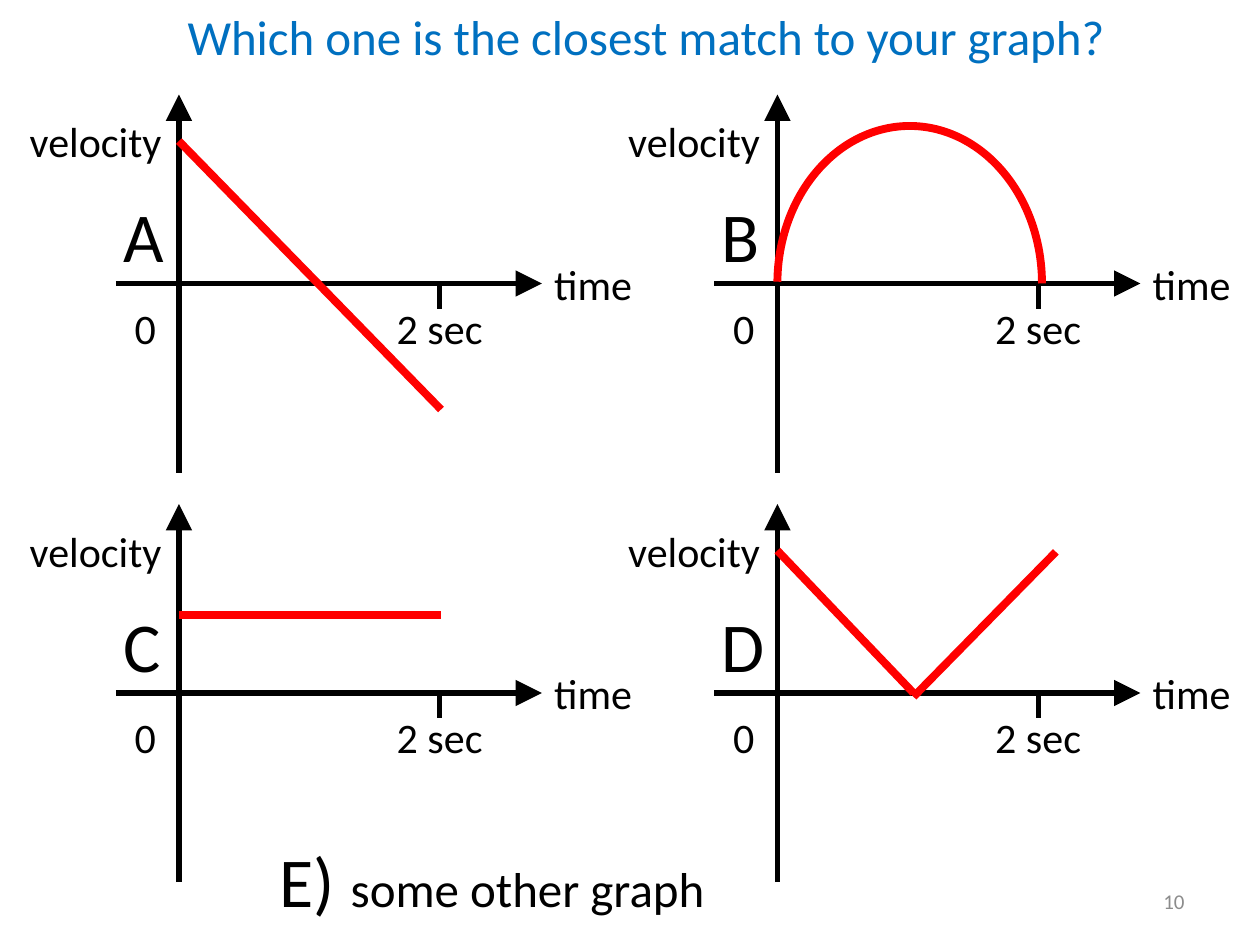
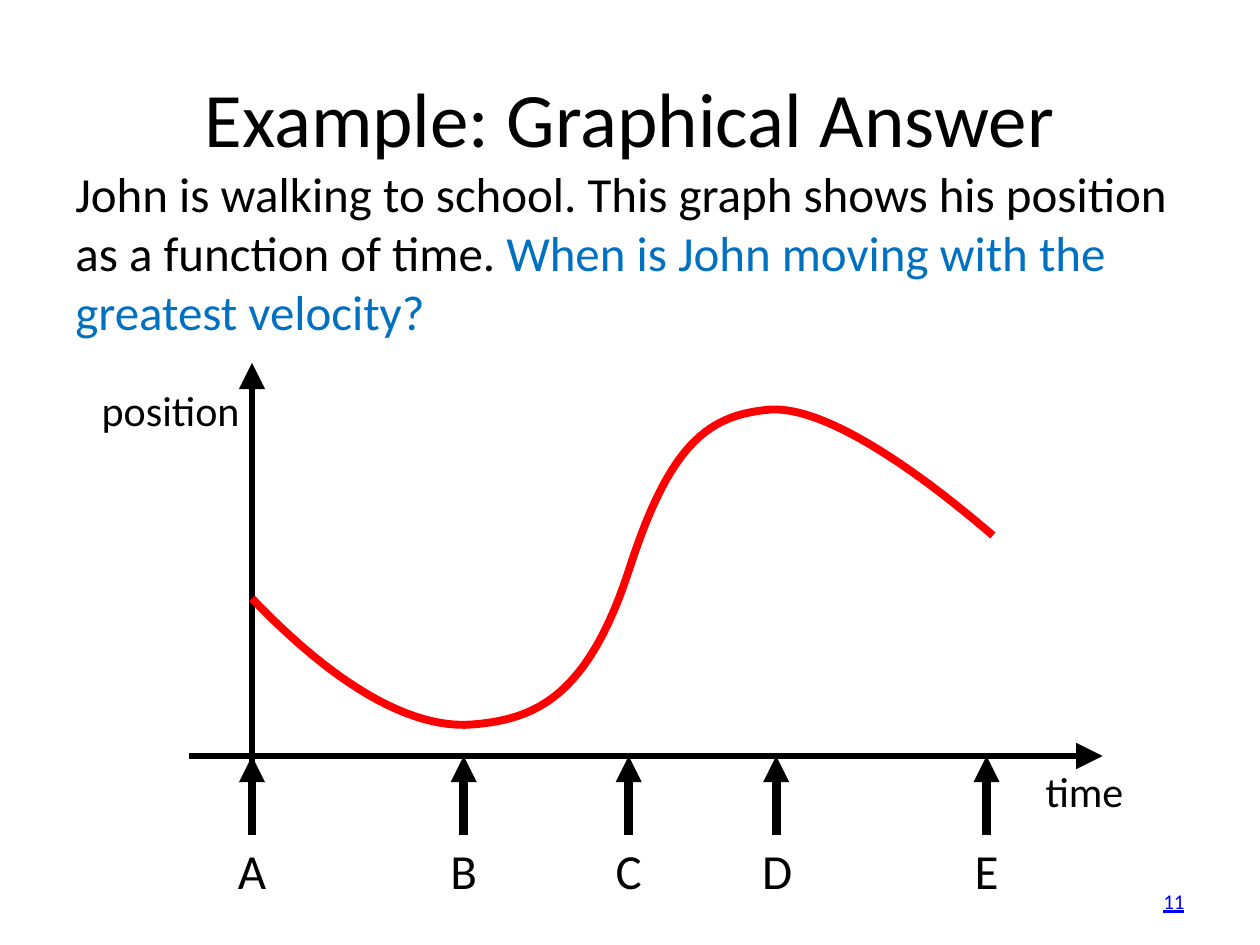
"""Build two physics quiz slides: matching velocity graphs and reading a position graph."""
from lxml.etree import SubElement
from pptx import Presentation
from pptx.dml.color import RGBColor
from pptx.enum.shapes import MSO_CONNECTOR, MSO_SHAPE
from pptx.enum.text import MSO_ANCHOR, PP_ALIGN
from pptx.oxml.ns import qn
from pptx.util import Pt

PX = 9144
BLACK, RED, BLUE, GRAY, LINK = "000000", "FF0000", "0070C0", "8C8C8C", "0000FF"
LEFT, CENTER, RIGHT = PP_ALIGN.LEFT, PP_ALIGN.CENTER, PP_ALIGN.RIGHT
rgb = RGBColor.from_string


def add_text(s, box, runs, align=LEFT, anchor=MSO_ANCHOR.TOP, wrap=False, **extra):
    tf = s.shapes.add_textbox(*[v * PX for v in box]).text_frame
    tf.word_wrap, tf.vertical_anchor = wrap, anchor
    p = tf.paragraphs[0]
    p.alignment = align
    for text, size, color in runs:
        r = p.add_run()
        r.text = text
        r.font.color.rgb = rgb(color)
        fmt = {"name": "Calibri", "size": Pt(size), **extra}
        for key, value in fmt.items():
            setattr(r.font, key, value)


def add_line(s, ends, color=BLACK, width=3, head=None):
    ln = s.shapes.add_connector(MSO_CONNECTOR.STRAIGHT, *[v * PX for v in ends])
    ln.line.color.rgb = rgb(color)
    ln.line.width = Pt(width)
    spPr = ln._element.spPr
    if head:
        SubElement(spPr.find(qn("a:ln")), qn("a:tailEnd"), type="triangle", w=head, len=head)
    SubElement(spPr, qn("a:effectLst"))


prs = Presentation()
prs.slide_width, prs.slide_height = 1000 * PX, 750 * PX
quiz, example = [prs.slides.add_slide(prs.slide_layouts[6]) for _ in range(2)]
for s, number, color, underline in [(quiz, "10", GRAY, False), (example, "11", LINK, True)]:
    add_text(s, (717, 695, 233, 40), [(number, 12, color)], RIGHT, MSO_ANCHOR.MIDDLE,
             wrap=True, underline=underline)

s = quiz
for i, letter in enumerate("ABCD"):
    x, y = 142 + i % 2 * 475, 225 + i // 2 * 325
    add_line(s, (x - 50, y, x + 288, y), head="lg")
    add_line(s, (x, y + 150, x, y - 150), head="lg")
    add_line(s, (x + 207, y, x + 207, y + 20))
    for text, size, dx, dy, w, h, align in [
        ("time", 24, 288, -25, 83, 50, LEFT),
        ("velocity", 24, -130, -138, 126, 50, RIGHT),
        ("2 sec", 24, 163, 10, 89, 50, LEFT),
        ("0", 24, -45, 10, 37, 50, LEFT),
        (letter, 40, -54, -77, 53, 77, LEFT),
    ]:
        add_text(s, (x + dx, y + dy, w, h), [(text, size, BLACK)], align)
add_text(s, (212, 660, 361, 77), [("E) ", 40, BLACK), ("some other graph", 28, BLACK)])
add_text(s, (139, 0, 777, 57), [("Which one is the closest match to your graph?", 28, BLUE)])

arc = s.shapes.add_shape(MSO_SHAPE.ARC, *[v * PX for v in (617, 100, 210, 250)])
arc.adjustments[0], arc.adjustments[1] = 108.45, 0
for ends in [(142, 112, 350, 325), (617, 437, 725, 550), (725, 553, 838, 438),
             (142, 488, 350, 488)]:
    add_line(s, ends, RED, 4.5)

s = example
add_text(s, (50, 30, 900, 125), [("Example: Graphical Answer", 44, BLACK)], CENTER,
         MSO_ANCHOR.MIDDLE, wrap=True)
add_text(s, (50, 125, 900, 550), [
    ("John is walking to school. This graph shows his position as a function of time. ", 28, BLACK),
    ("When is John moving with the greatest velocity?", 28, BLUE),
], wrap=True)
add_line(s, (150, 600, 875, 600), head="lg")
add_text(s, (820, 603, 83, 50), [("time", 24, BLACK)])
add_line(s, (200, 638, 200, 288), head="lg")
add_text(s, (69, 300, 131, 50), [("position", 24, BLACK)], RIGHT)

knots = [(200, 475), (264, 542), (325, 579), (375, 575), (425, 571), (467, 553), (500, 450),
         (533, 348), (565, 329), (612, 325), (654, 323), (723, 369), (788, 425)]
points = []
for i in range(0, len(knots) - 1, 3):
    for t in [n / 24 for n in range(1, 25)]:
        weights = ((1 - t) ** 3, 3 * t * (1 - t) ** 2, 3 * t ** 2 * (1 - t), t ** 3)
        points.append([sum(w * k[axis] for w, k in zip(weights, knots[i:i + 4])) * PX
                       for axis in (0, 1)])
fb = s.shapes.build_freeform(knots[0][0] * PX, knots[0][1] * PX)
fb.add_line_segments(points, close=False)
curve = fb.convert_to_shape()
for sp in (arc, curve):
    sp.shadow.inherit = False
    sp.fill.background()
    sp.line.color.rgb = rgb(RED)
    sp.line.width = Pt(4.5)

for letter, x in zip("ABCDE", (200, 368, 499, 616, 783)):
    add_text(s, (x - 21, 662, 42, 57), [(letter, 28, BLACK)], CENTER)
    add_line(s, (x, 663, x, 600), width=5, head="med")

prs.save("out.pptx")
